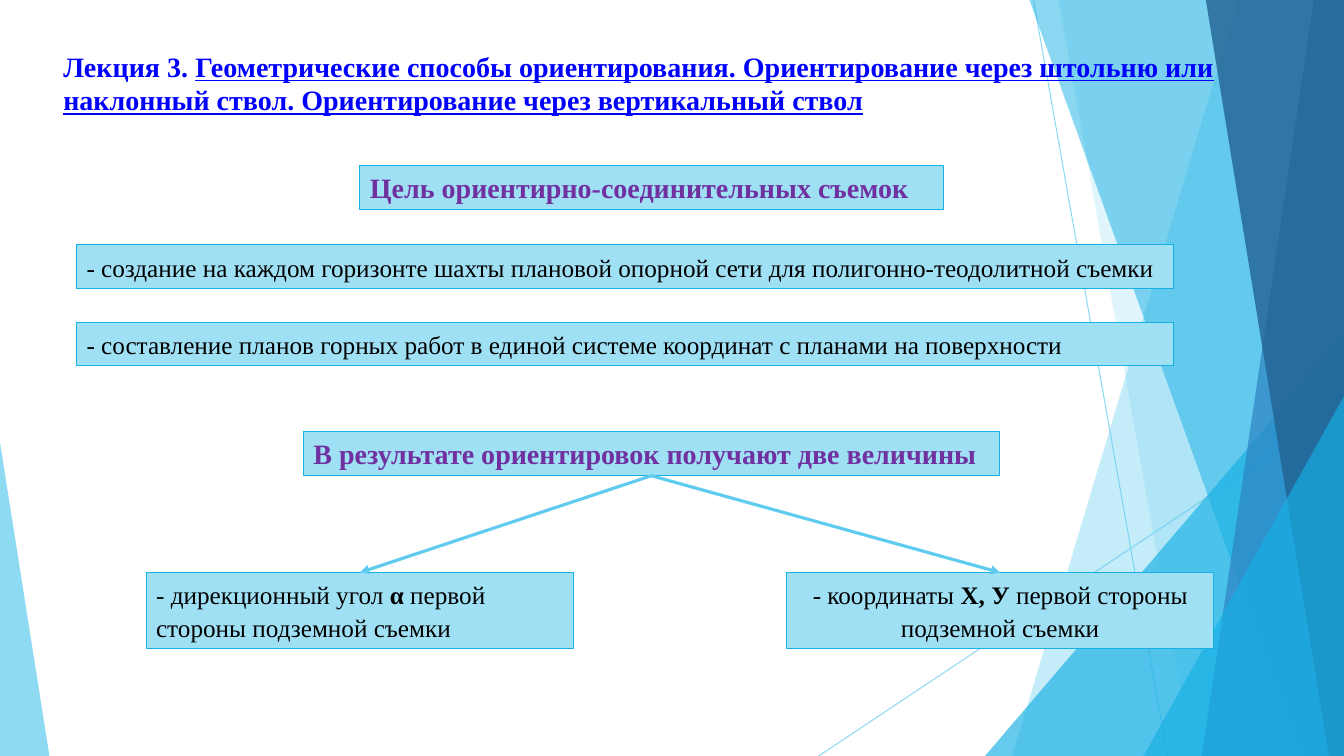
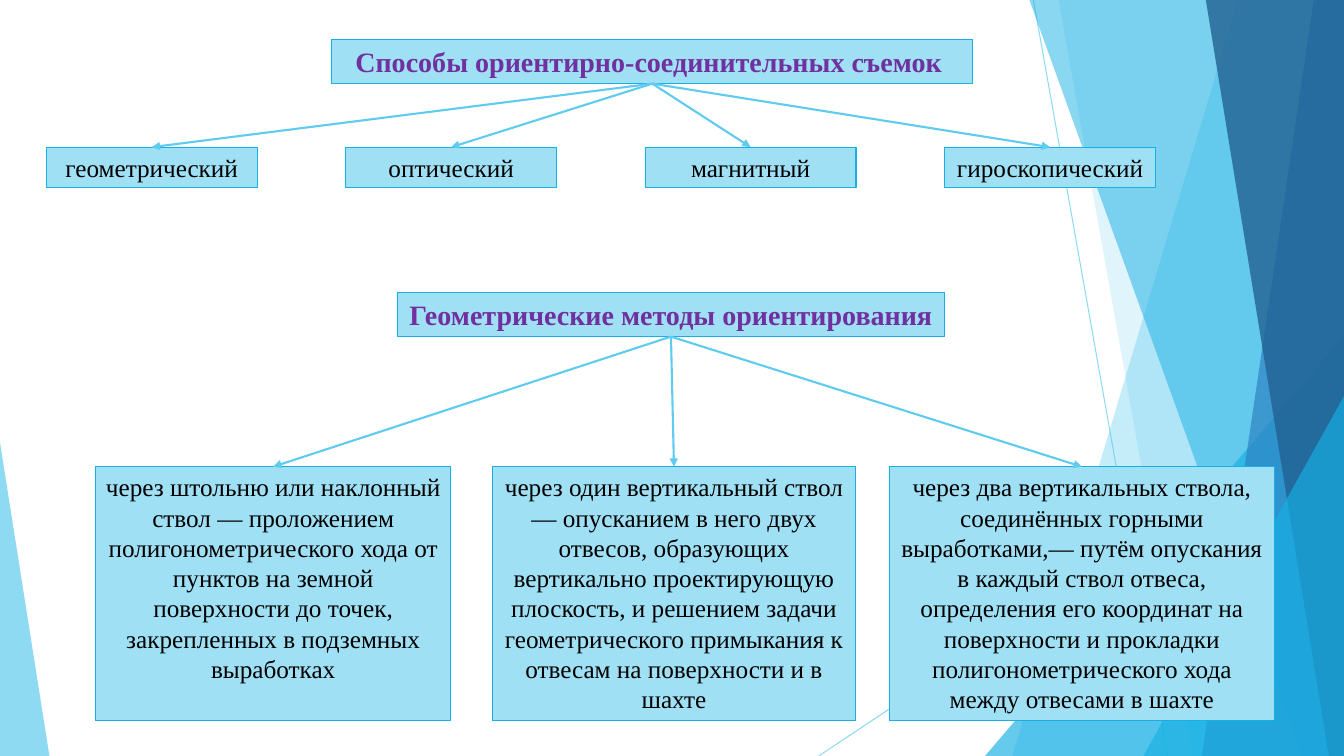
import pptx
import pptx.util
import pptx.dml.color
import pptx.enum.shapes
import pptx.enum.text
import pptx.oxml.ns
import pptx.oxml.xmlchemy

Inches = pptx.util.Inches
Pt = pptx.util.Pt
OxmlElement = pptx.oxml.xmlchemy.OxmlElement
SHAPE = pptx.enum.shapes.MSO_SHAPE
LEFT = pptx.enum.text.PP_ALIGN.LEFT
CENTER = pptx.enum.text.PP_ALIGN.CENTER
JUSTIFY = pptx.enum.text.PP_ALIGN.JUSTIFY

W, H = 13.33, 7.5
FONT = "Times New Roman"
SKY, CYAN, BLUE, NAVY = "5FCBEF", "17B0E4", "2E83C3", "226292"
PALE, PURPLE, TITLE_BLUE, BLACK = "9FE0F5", "7030A0", "0000FF", "000000"


def paint(fill, color, alpha=100):
    """Make a fill solid, with its opacity in percent."""
    fill.solid()
    fill.fore_color.rgb = pptx.dml.color.RGBColor.from_string(color)
    if alpha < 100:
        clr = fill._xPr.find(pptx.oxml.ns.qn("a:solidFill"))[0]
        node = OxmlElement("a:alpha")
        node.set("val", str(alpha * 1000))
        clr.append(node)


def draw_line(s, x1, y1, x2, y2, width, alpha=100):
    cn = s.shapes.add_connector(pptx.enum.shapes.MSO_CONNECTOR.STRAIGHT, x1, y1, x2, y2)
    paint(cn.line.fill, SKY, alpha)
    cn.line.width = Pt(width)
    cn._element.spPr.append(OxmlElement("a:effectLst"))
    return cn


prs = pptx.Presentation()
prs.slide_width, prs.slide_height = Inches(W), Inches(H)
blank = prs.slide_layouts[6]
for ph in list(blank.placeholders):
    ph._element.getparent().remove(ph._element)

# Shared background: built on the first slide, then moved to the layout
first = prs.slides.add_slide(blank)
for x1, y1, x2 in [(10.25, 0, 11.58), (W, 4.03, 8.12)]:
    draw_line(first, Inches(x1), Inches(y1), Inches(x2), Inches(H), 0.75, 70)

# band: top x, bottom x; triangle: left, top, width, apex
facets = [
    ("band", (12.28, 10.04), SKY, 36),
    ("band", (10.5, 11.83), SKY, 20),
    ("triangle", (9.77, 3.33, 3.56, 1), CYAN, 66),
    ("band", (10.21, 12.91), CYAN, 50),
    ("band", (13.03, 11.92), BLUE, 70),
    ("band", (11.96, 13.18), NAVY, 80),
    ("triangle", (11.34, 3.93, 1.99, 1), CYAN, 66),
    ("triangle", (0, 4.39, 0.49, 0), SKY, 70),
]
for kind, place, color, alpha in facets:
    if kind == "band":
        top, bottom = place
        fb = first.shapes.build_freeform(Inches(top), 0)
        fb.add_line_segments([(Inches(x), Inches(y)) for x, y in [(W, 0), (W, H), (bottom, H)]])
        sp = fb.convert_to_shape()
    else:
        x, y, w, apex = place
        sp = first.shapes.add_shape(SHAPE.ISOSCELES_TRIANGLE, Inches(x), Inches(y),
                                    Inches(w), Inches(H - y))
        sp.adjustments[0] = apex
    sp.shadow.inherit = False
    sp.line.fill.background()
    paint(sp.fill, color, alpha)
for sp in list(first.shapes):
    blank.shapes._spTree.append(sp._element)

# style: size, colour, bold, line spacing, wrap
styles = {
    "title": (20, TITLE_BLUE, True, None, True),
    "heading": (20, PURPLE, True, None, False),
    "body": (18, BLACK, False, None, True),
    "loose": (18, BLACK, False, 1.07, True),
}

# box: place, style, alignment, runs (every second run is emphasised)
goal_boxes = [
    ((0.53, 0.44, 12.53, 0.77), "title", LEFT,
     ["Лекция 3. ", "Геометрические способы ориентирования. Ориентирование через штольню "
      "или наклонный ствол. Ориентирование через вертикальный ствол"]),
    ((3.57, 1.64, 5.79, 0.44), "heading", LEFT, ["Цель ориентирно-соединительных съемок"]),
    ((0.76, 2.43, 10.88, 0.43), "loose", JUSTIFY,
     ["- создание на каждом горизонте шахты плановой опорной сети для "
      "полигонно-теодолитной съемки"]),
    ((0.76, 3.2, 10.88, 0.43), "loose", LEFT,
     ["- составление планов горных работ в единой системе координат с планами на поверхности"]),
    ((3.01, 4.28, 6.9, 0.44), "heading", LEFT,
     ["В результате ориентировок получают две величины"]),
    ((1.45, 5.68, 4.24, 0.75), "loose", LEFT,
     ["- дирекционный угол ", "α", " первой стороны подземной съемки"]),
    ((7.8, 5.68, 4.24, 0.75), "loose", CENTER,
     ["- координаты ", "Х, У ", "первой стороны подземной съемки"]),
]

methods = ["геометрический", "оптический", "магнитный", "гироскопический"]
method_boxes = [
    ((3.29, 0.39, 6.36, 0.44), "heading", CENTER, ["Способы ориентирно-соединительных съемок "]),
    *[((0.46 + 2.97 * i, 1.46, 2.09, 0.4), "body", CENTER, [name])
      for i, name in enumerate(methods)],
    ((3.94, 2.9, 5.43, 0.44), "heading", CENTER, ["Геометрические методы ориентирования"]),
    ((0.95, 4.63, 3.52, 2.52), "body", CENTER,
     ["через штольню или наклонный ствол — проложением полигонометрического хода от пунктов "
      "на земной поверхности до точек, закрепленных в подземных выработках"]),
    ((4.88, 4.63, 3.61, 2.52), "body", CENTER,
     ["через один вертикальный ствол — опусканием в него двух отвесов, образующих вертикально "
      "проектирующую плоскость, и решением задачи геометрического примыкания к отвесам на "
      "поверхности и в шахте"]),
    ((8.82, 4.63, 3.82, 2.52), "body", CENTER,
     ["через два вертикальных ствола, соединённых горными выработками,— путём опускания в "
      "каждый ствол отвеса, определения его координат на поверхности и прокладки "
      "полигонометрического хода между отвесами в шахте"]),
]

# links: index of the parent box and of its children
slides = [
    (first, goal_boxes, {4: [5, 6]}, 2.25),
    (prs.slides.add_slide(blank), method_boxes, {0: [1, 2, 3, 4], 5: [6, 7, 8]}, 1.5),
]
for s, boxes, links, arrow_width in slides:
    drawn = []
    for place, style, align, runs in boxes:
        size, color, bold, spacing, wrap = styles[style]
        place = [Inches(v) for v in place]
        if style == "title":
            sp = s.shapes.add_textbox(*place)
        else:
            sp = s.shapes.add_shape(SHAPE.RECTANGLE, *place)
            sp.shadow.inherit = False
            paint(sp.fill, PALE)
            paint(sp.line.fill, CYAN)
            sp.line.width = Pt(0.75)
        drawn.append(sp)
        tf = sp.text_frame
        tf.word_wrap = wrap
        tf.auto_size = pptx.enum.text.MSO_AUTO_SIZE.SHAPE_TO_FIT_TEXT
        tf.vertical_anchor = pptx.enum.text.MSO_ANCHOR.TOP
        p = tf.paragraphs[0]
        p.alignment = align
        p.line_spacing = spacing
        p.font.name, p.font.size, p.font.bold = FONT, Pt(size), bold
        paint(p.font.fill, color)
        for i, text in enumerate(runs):
            r = p.add_run()
            r.text = text
            if i % 2 and style == "title":
                r.font.underline = True
            elif i % 2:
                r.font.bold = True

    for parent, children in links.items():
        start = drawn[parent]
        for child in children:
            end = drawn[child]
            cn = draw_line(s, start.left + start.width // 2, start.top + start.height,
                           end.left + end.width // 2, end.top, arrow_width)
            cn.begin_connect(start, 2)
            cn.end_connect(end, 0)
            tail = OxmlElement("a:tailEnd")
            tail.set("type", "triangle")
            cn.line._get_or_add_ln().append(tail)

prs.save("out.pptx")
